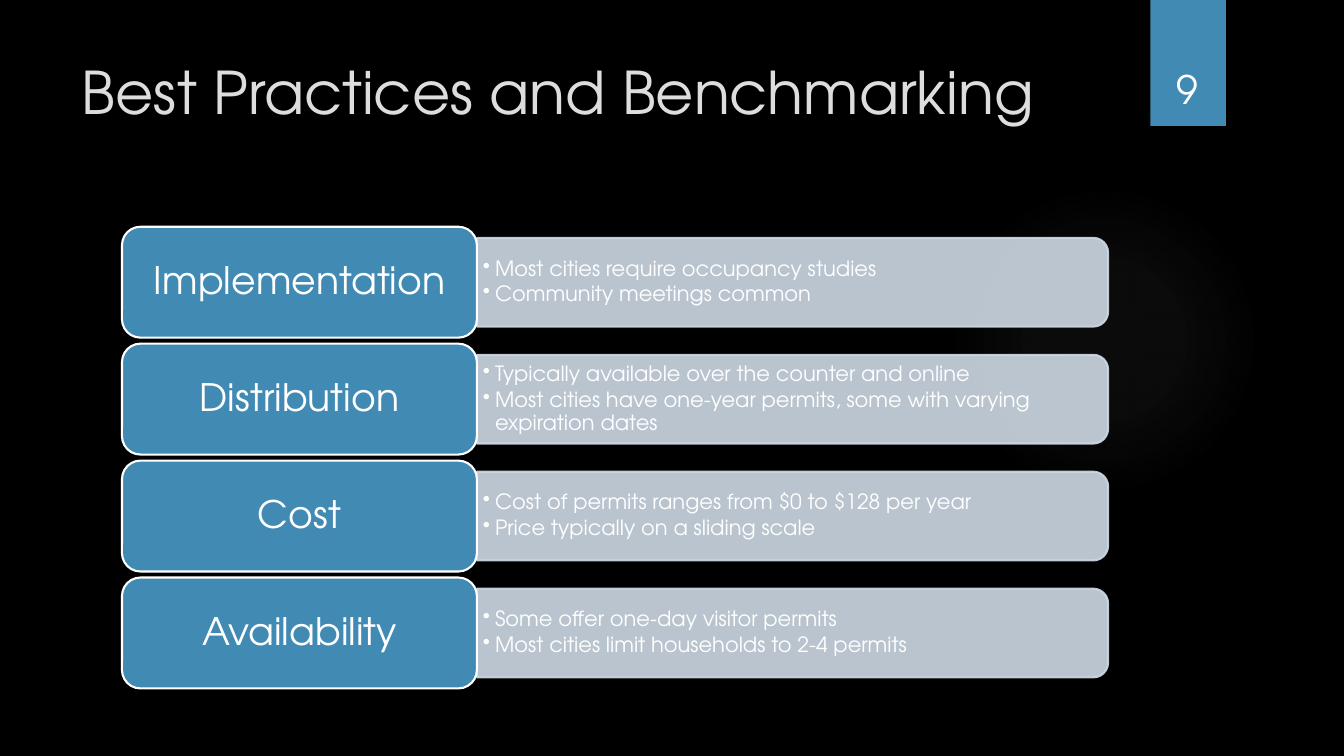
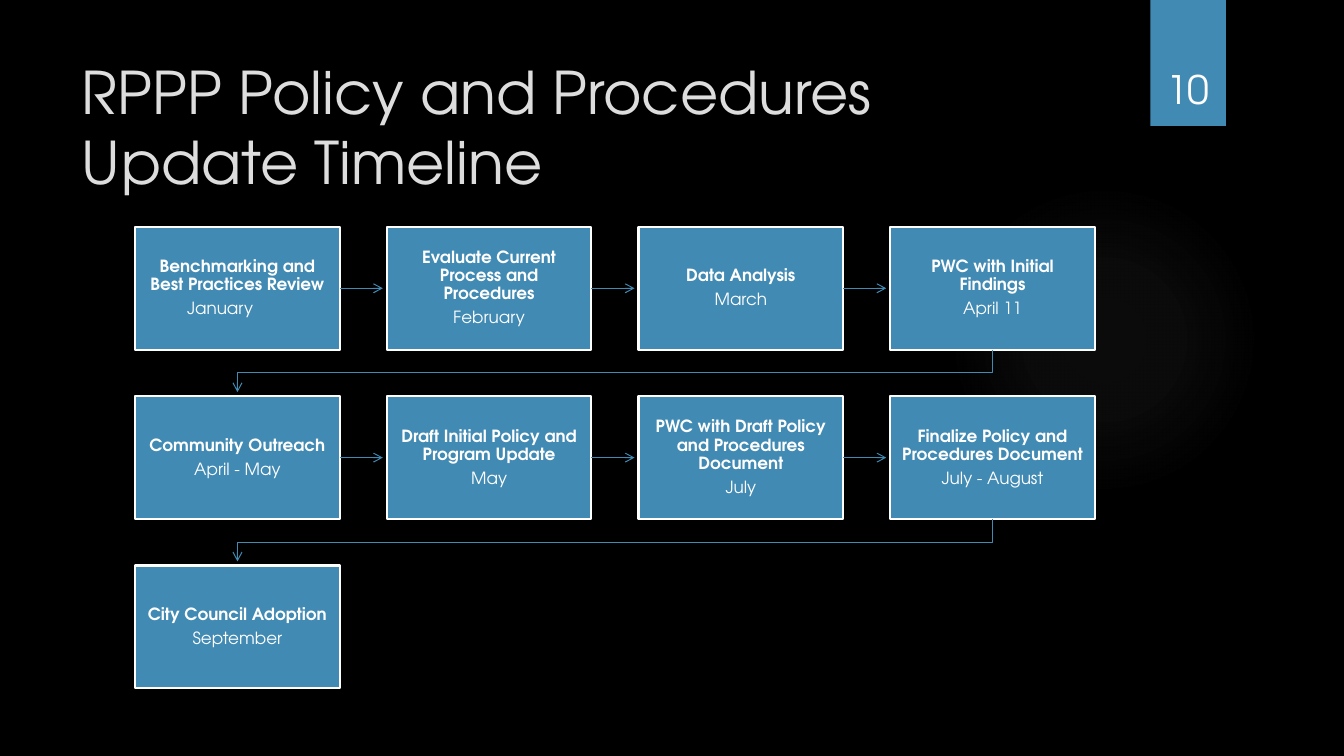
import pptx
import pptx.dml.color
import pptx.enum.shapes
import pptx.enum.text
import pptx.oxml
import pptx.oxml.ns
import pptx.util
from lxml import etree

Inches = pptx.util.Inches
Pt = pptx.util.Pt
qn = pptx.oxml.ns.qn
SHAPE = pptx.enum.shapes.MSO_SHAPE
ANCHOR = pptx.enum.text.MSO_ANCHOR
ALIGN = pptx.enum.text.PP_ALIGN

FONT = "TeX Gyre Adventor"
BLUE = "418AB3"
WHITE = "FFFFFF"
PALE = "CFDAE5"
TITLE_GREY = "DDDDDD"


def rgb(value):
    return pptx.dml.color.RGBColor.from_string(value)


def format_paragraph(paragraph, size, color=WHITE, bold=False, align=ALIGN.CENTER,
                     line_spacing=1.0, space_after=0):
    paragraph.alignment = align
    paragraph.line_spacing = line_spacing
    paragraph.space_after = Pt(space_after)
    for run in paragraph.runs:
        run.font.name = FONT
        run.font.size = Pt(size)
        run.font.bold = bold
        run.font.color.rgb = rgb(color)


presentation = pptx.Presentation()
presentation.slide_width = Inches(13.33)
presentation.slide_height = Inches(7.5)

background = presentation.slide_master.background.fill
background.solid()
background.fore_color.rgb = rgb("000000")

layout = presentation.slide_layouts[5]
for placeholder in list(layout.placeholders):
    if placeholder.placeholder_format.idx != 0:
        layout.shapes.element.remove(placeholder.element)

practices_slide = presentation.slides.add_slide(layout)
timeline_slide = presentation.slides.add_slide(layout)

glow = practices_slide.shapes.add_shape(
    SHAPE.OVAL, Inches(9.41), Inches(1.83), Inches(3.08), Inches(3.08))
glow.shadow.inherit = False
glow.line.fill.background()
stops = "".join(
    f'<a:gs pos="{position}000"><a:srgbClr val="9E9E9E">'
    f'<a:alpha val="{alpha}000"/></a:srgbClr></a:gs>'
    for position, alpha in ((0, 7), (36, 6), (69, 0)))
glow.element.spPr.insert(2, pptx.oxml.parse_xml(
    '<a:gradFill xmlns:a="http://schemas.openxmlformats.org/drawingml/2006/main">'
    f'<a:gsLst>{stops}</a:gsLst><a:path path="circle">'
    '<a:fillToRect l="50000" t="50000" r="50000" b="50000"/></a:path></a:gradFill>'))

number_band = practices_slide.shapes.add_shape(
    SHAPE.RECTANGLE, Inches(11.41), 0, Inches(0.75), Inches(1.25))
number_band.shadow.inherit = False
number_band.fill.solid()
number_band.fill.fore_color.rgb = rgb(BLUE)
number_band.line.fill.background()

layout.shapes.element.insert(2, glow.element)
layout.shapes.element.insert(3, number_band.element)

for slide, number, title_text in (
    (practices_slide, "9", "Best Practices and Benchmarking"),
    (timeline_slide, "10", "RPPP Policy and Procedures\vUpdate Timeline"),
):
    title = slide.shapes.title
    title.left, title.top = Inches(0.71), Inches(0.5)
    title.width, title.height = Inches(10.29), Inches(1.53)
    title.text_frame.text = title_text
    title.text_frame.auto_size = pptx.enum.text.MSO_AUTO_SIZE.NONE
    title.text_frame.vertical_anchor = ANCHOR.TOP
    format_paragraph(title.text_frame.paragraphs[0], 42, TITLE_GREY, align=ALIGN.LEFT)

    number_box = slide.shapes.add_textbox(
        Inches(11.32), Inches(0.32), Inches(0.92), Inches(0.84))
    number_box.text_frame.word_wrap = True
    number_box.text_frame.vertical_anchor = ANCHOR.BOTTOM
    number_box.text_frame.text = number
    format_paragraph(number_box.text_frame.paragraphs[0], 28)

practices = (
    ("Implementation", ("Most cities require occupancy studies",
                        "Community meetings common")),
    ("Distribution", ("Typically available over the counter and online",
                      "Most cities have one-year permits, some with varying expiration dates")),
    ("Cost", ("Cost of permits ranges from $0 to $128 per year",
              "Price typically on a sliding scale")),
    ("Availability", ("Some offer one-day visitor permits",
                      "Most cities limit households to 2-4 permits")),
)
for index, (heading, points) in enumerate(practices):
    top = 2.25 + 1.16 * index

    panel = practices_slide.shapes.add_shape(
        SHAPE.ROUND_2_SAME_RECTANGLE,
        Inches(7.42), Inches(top - 2.58), Inches(0.88), Inches(6.26))
    panel.rotation = 90
    panel.shadow.inherit = False
    panel.line.width = Pt(1.5)
    for fill in (panel.fill, panel.line.fill):
        fill.solid()
        fill.fore_color.rgb = rgb(PALE)
    for color in panel.element.spPr.iter(qn("a:srgbClr")):
        etree.SubElement(color, qn("a:alpha"), val="90000")

    points_box = practices_slide.shapes.add_textbox(
        Inches(4.73), Inches(top + 0.15), Inches(6.22), Inches(0.8))
    text_frame = points_box.text_frame
    text_frame.word_wrap = True
    text_frame.vertical_anchor = ANCHOR.MIDDLE
    text_frame.margin_left = text_frame.margin_right = Inches(0.06)
    text_frame.margin_top = text_frame.margin_bottom = Inches(0.03)
    text_frame.text = "\n".join(points)
    for paragraph in text_frame.paragraphs:
        properties = paragraph._p.get_or_add_pPr()
        properties.set("marL", str(Inches(0.12)))
        properties.set("indent", str(-Inches(0.12)))
        etree.SubElement(properties, qn("a:buChar"), char="•")
        format_paragraph(paragraph, 15, align=ALIGN.LEFT, line_spacing=0.9, space_after=2.25)

    label = practices_slide.shapes.add_shape(
        SHAPE.ROUNDED_RECTANGLE, Inches(1.21), Inches(top), Inches(3.52), Inches(1.1))
    label.shadow.inherit = False
    label.fill.solid()
    label.fill.fore_color.rgb = rgb(BLUE)
    label.line.color.rgb = rgb(WHITE)
    label.line.width = Pt(1.5)
    label.text_frame.word_wrap = True
    label.text_frame.vertical_anchor = ANCHOR.MIDDLE
    label.text_frame.text = heading
    format_paragraph(label.text_frame.paragraphs[0], 27, line_spacing=0.9, space_after=9.45)

steps = (
    ("Benchmarking and Best Practices Review", "January\t"),
    ("Evaluate Current Process and Procedures", "February"),
    ("Data Analysis", "March"),
    ("PWC with Initial Findings", "April 11"),
    ("Community Outreach", "April - May"),
    ("Draft Initial Policy and Program Update", "May"),
    ("PWC with Draft Policy and Procedures Document", "July"),
    ("Finalize Policy and Procedures Document", "July - August"),
    ("City Council Adoption", "September"),
)
columns = 4
column_step = (8.83 - 1.34) / (columns - 1)
step_boxes = []
for index, (task, date) in enumerate(steps):
    row, column = divmod(index, columns)
    box = timeline_slide.shapes.add_shape(
        SHAPE.RECTANGLE, Inches(1.34 + column_step * column), Inches(2.25 + 1.68 * row),
        Inches(2.03), Inches(1.22))
    box.shadow.inherit = False
    box.fill.solid()
    box.fill.fore_color.rgb = rgb(BLUE)
    box.line.color.rgb = rgb(WHITE)
    box.line.width = Pt(1.5)
    text_frame = box.text_frame
    text_frame.word_wrap = True
    text_frame.vertical_anchor = ANCHOR.MIDDLE
    text_frame.margin_left = text_frame.margin_right = Inches(0.09)
    text_frame.margin_top = text_frame.margin_bottom = Inches(0.09)
    text_frame.text = f"{task}\n{date}"
    for paragraph, bold in zip(text_frame.paragraphs, (True, False)):
        format_paragraph(paragraph, 12, bold=bold, line_spacing=0.9, space_after=4.2)
    step_boxes.append(box)

arrow_gap = Inches(0.04)
arrows = []
for box, next_box in zip(step_boxes, step_boxes[1:]):
    if next_box.top == box.top:
        middle = box.top + box.height // 2
        arrow = timeline_slide.shapes.add_connector(
            pptx.enum.shapes.MSO_CONNECTOR.STRAIGHT,
            box.left + box.width, middle, next_box.left - arrow_gap, middle)
        arrow.begin_connect(box, 3)
    else:
        start_x = box.left + box.width // 2
        end_x = next_box.left + next_box.width // 2
        bottom = box.top + box.height
        turn = (bottom + next_box.top) // 2
        builder = timeline_slide.shapes.build_freeform(start_x, bottom)
        builder.add_line_segments(
            ((start_x, turn), (end_x, turn), (end_x, next_box.top - arrow_gap)), close=False)
        arrow = builder.convert_to_shape()
        arrow.fill.background()
    arrows.append(arrow)

for arrow in arrows:
    arrow.line.color.rgb = rgb(BLUE)
    arrow.line.width = Pt(0.75)
    properties = arrow.element.spPr
    etree.SubElement(properties.find(qn("a:ln")), qn("a:tailEnd"), type="arrow")
    etree.SubElement(properties, qn("a:effectLst"))

presentation.save("out.pptx")
